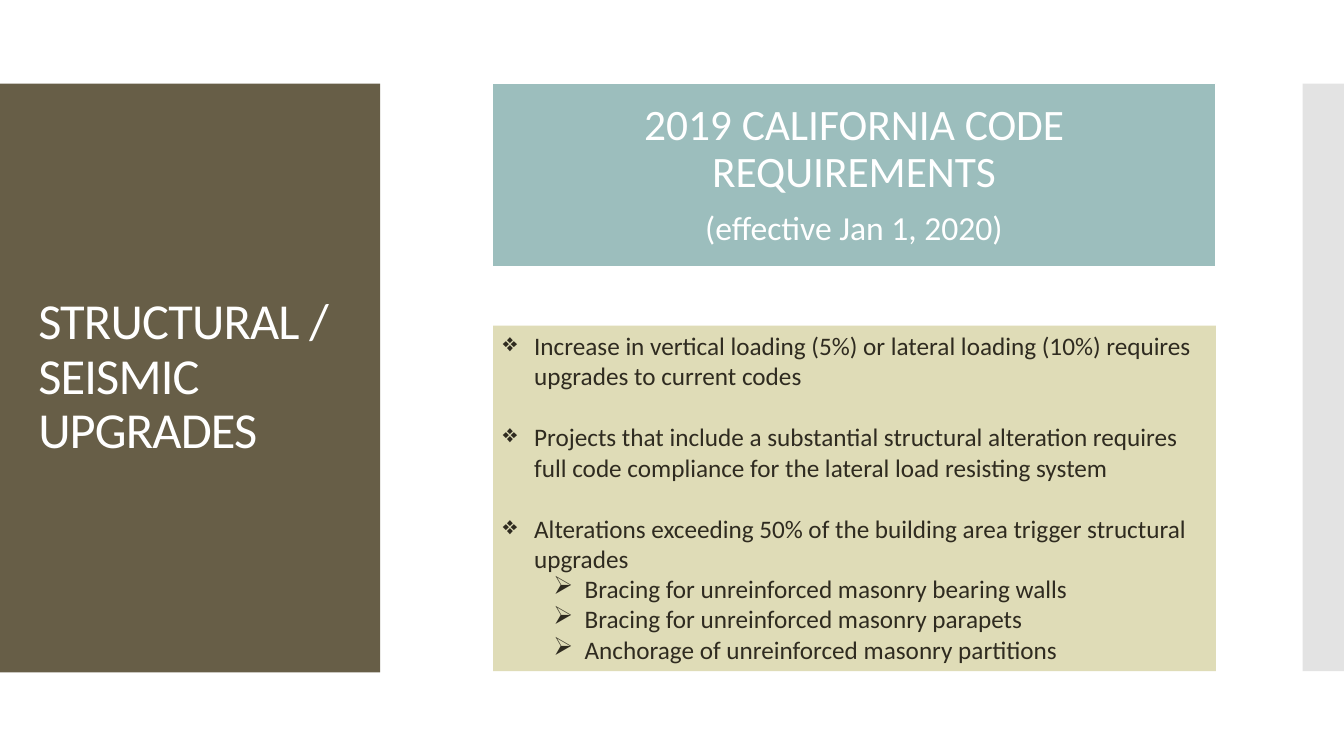
import pptx
import pptx.dml.color
import pptx.enum.shapes
import pptx.enum.text
import pptx.oxml.ns
import pptx.util
from lxml import etree

EMU_PER_PX = 9144
FONT = "Calibri"

WHITE = pptx.dml.color.RGBColor(0xFF, 0xFF, 0xFF)
BROWN = pptx.dml.color.RGBColor(0x67, 0x5E, 0x47)
GREY = pptx.dml.color.RGBColor(0xC8, 0xC8, 0xC8)
TEAL = pptx.dml.color.RGBColor(0x9C, 0xBE, 0xBD)
SAND = pptx.dml.color.RGBColor(0xDF, 0xDC, 0xB7)
INK = pptx.dml.color.RGBColor(0x2F, 0x2B, 0x20)

LEFT, CENTER = pptx.enum.text.PP_ALIGN.LEFT, pptx.enum.text.PP_ALIGN.CENTER
TOP, MIDDLE = pptx.enum.text.MSO_ANCHOR.TOP, pptx.enum.text.MSO_ANCHOR.MIDDLE

REQUIREMENTS = [
    (0, "Increase in vertical loading (5%) or lateral loading (10%) requires "
        "upgrades to current codes"),
    (0, "Projects that include a substantial structural alteration requires "
        "full code compliance for the lateral load resisting system"),
    (0, "Alterations exceeding 50% of the building area trigger structural upgrades"),
    (1, "Bracing for unreinforced masonry bearing walls"),
    (1, "Bracing for unreinforced masonry parapets"),
    (1, "Anchorage of unreinforced masonry partitions"),
]
BULLETS = "❖➢"
INDENTS = (31, 81)
HANGING = 31
BLANK_LINE = 22


def px(length):
    return pptx.util.Emu(length * EMU_PER_PX)


def add_panel(slide, left, top, width, height, fill):
    panel = slide.shapes.add_shape(
        pptx.enum.shapes.MSO_SHAPE.RECTANGLE,
        px(left), px(top), px(width), px(height))
    panel.shadow.inherit = False
    panel.fill.solid()
    panel.fill.fore_color.rgb = fill
    panel.line.fill.background()
    return panel


def make_translucent(panel, percent):
    color = panel.fill._xPr.find(".//" + pptx.oxml.ns.qn("a:srgbClr"))
    etree.SubElement(color, pptx.oxml.ns.qn("a:alpha"), val=str(percent * 1000))


def set_frame(panel, anchor, left, right, top=5, bottom=5):
    frame = panel.text_frame
    frame.word_wrap = True
    frame.vertical_anchor = anchor
    frame.margin_left, frame.margin_right = px(left), px(right)
    frame.margin_top, frame.margin_bottom = px(top), px(bottom)
    return frame


def write_lines(frame, lines, color, align, spacing=1.0):
    """Fill the frame with one paragraph for each (text, size) pair."""
    frame.text = "\n".join(text for text, _ in lines)
    for paragraph, (_, size) in zip(frame.paragraphs, lines):
        paragraph.alignment = align
        paragraph.line_spacing = spacing
        for run in paragraph.runs:
            run.font.name = FONT
            run.font.size = pptx.util.Pt(size)
            run.font.color.rgb = color


def add_bullet(paragraph, level):
    paragraph.level = level
    properties = paragraph._p.get_or_add_pPr()
    properties.set("marL", str(px(INDENTS[level])))
    properties.set("indent", str(-px(HANGING)))
    etree.SubElement(properties, pptx.oxml.ns.qn("a:buChar"), char=BULLETS[level])


def add_title(slide):
    panel = add_panel(slide, 0, 83, 377, 584, BROWN)
    frame = set_frame(panel, MIDDLE, 38, 37)
    write_lines(frame, [("STRUCTURAL / SEISMIC UPGRADES", 36)], WHITE, LEFT, 0.9)
    frame.paragraphs[0].runs[0]._r.get_or_add_rPr().set("spc", "-60")


def add_code_heading(slide):
    panel = add_panel(slide, 488, 83, 718, 182, TEAL)
    panel.line.color.rgb = WHITE
    panel.line.width = pptx.util.Pt(0.85)
    frame = set_frame(panel, MIDDLE, 40, 40)
    lines = [("2019 CALIFORNIA CODE REQUIREMENTS", 31), ("(effective Jan 1, 2020)", 24)]
    write_lines(frame, lines, WHITE, CENTER, 0.9)
    frame.paragraphs[0].space_after = pptx.util.Pt(11)


def add_requirements(slide):
    panel = add_panel(slide, 489, 323, 717, 343, SAND)
    frame = set_frame(panel, TOP, 10, 10)
    write_lines(frame, [(text, 18) for _, text in REQUIREMENTS], INK, LEFT)
    for index, (level, _) in enumerate(REQUIREMENTS):
        paragraph = frame.paragraphs[index]
        if index and level == 0:
            paragraph.space_before = pptx.util.Pt(BLANK_LINE)
        add_bullet(paragraph, level)


def main():
    deck = pptx.Presentation()
    deck.slide_width, deck.slide_height = px(1333), px(750)
    slide = deck.slides.add_slide(deck.slide_layouts[6])
    make_translucent(add_panel(slide, 1292, 83, 41, 583, GREY), 50)
    add_title(slide)
    add_code_heading(slide)
    add_requirements(slide)
    deck.save("out.pptx")


if __name__ == "__main__":
    main()
